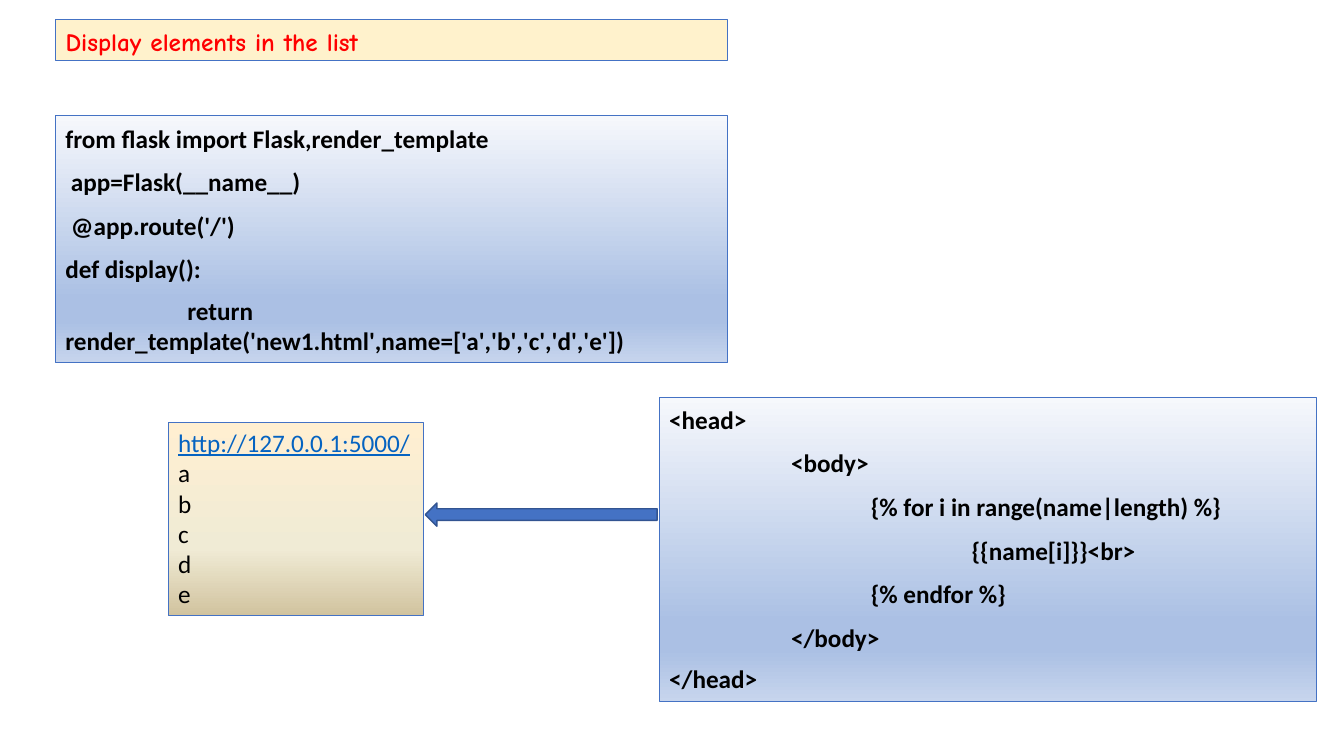
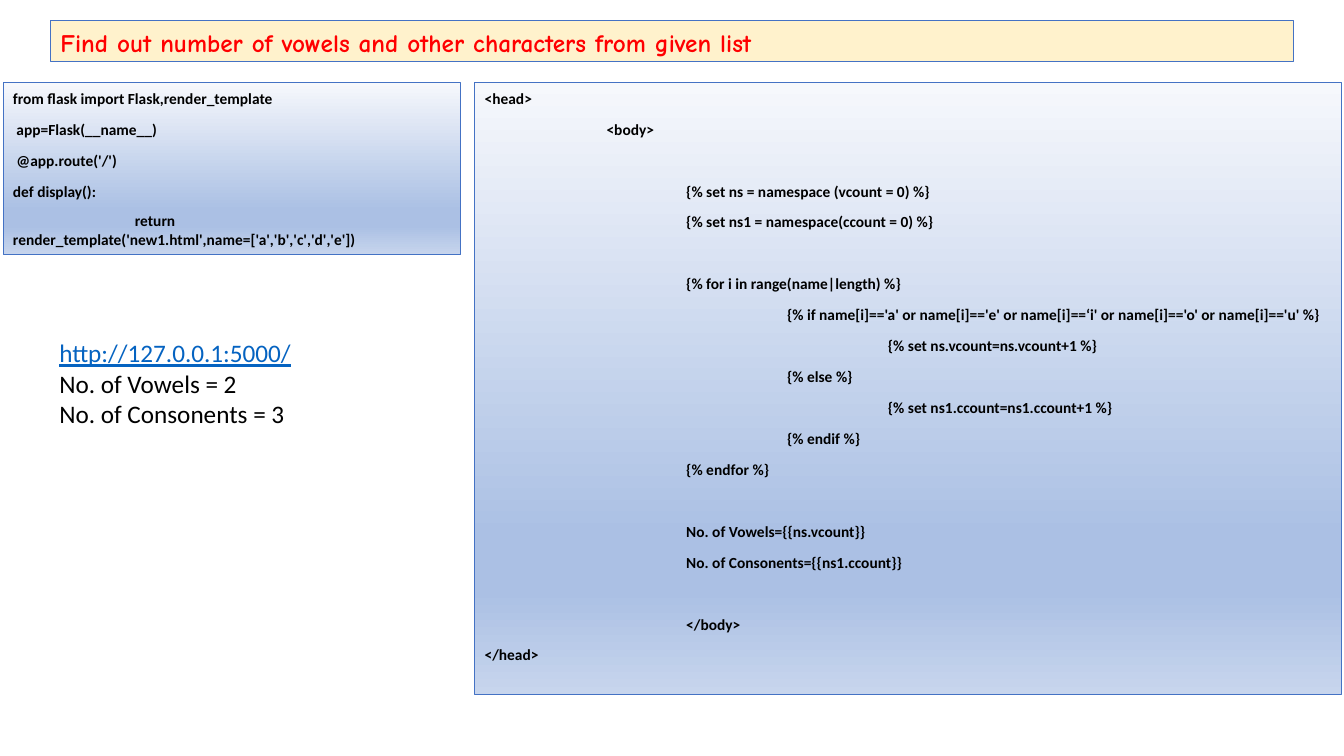
from lxml import etree
from pptx import Presentation
from pptx.dml.color import RGBColor
from pptx.enum import shapes, text
from pptx.oxml.ns import qn
from pptx.util import Pt

CREAM = RGBColor(0xFF, 0xF2, 0xCC)
RED = RGBColor(0xFF, 0x00, 0x00)
BLACK = RGBColor(0x00, 0x00, 0x00)
BLUE = RGBColor(0x44, 0x72, 0xC4)
DARK_BLUE = RGBColor(0x32, 0x54, 0x91)
LINK_BLUE = RGBColor(0x05, 0x63, 0xC1)
BLUE_FADE = [
    (0, RGBColor(0xF6, 0xF8, 0xFC)),
    (74, RGBColor(0xAB, 0xC0, 0xE4)),
    (83, RGBColor(0xAB, 0xC0, 0xE4)),
    (100, RGBColor(0xC7, 0xD5, 0xED)),
]
SAND_FADE = [
    (0, RGBColor(0xFF, 0xEF, 0xD1)),
    (65, RGBColor(0xF0, 0xEB, 0xD5)),
    (100, RGBColor(0xD1, 0xC3, 0x9F)),
]

TITLE_FONT, BODY_FONT = "Comic Neue", "Calibri"
INDENTS = [0, 87.1, 144, 216, 288]
LINE_SPACING, SPACE_AFTER = 1.07, 8
BLOCK_GAP = 22.1

URL = "http://127.0.0.1:5000/"
FLASK_CODE = [[
    (0, "from flask import Flask,render_template"),
    (0, " app=Flask(__name__)"),
    (0, " @app.route('/')"),
    (0, "def display():"),
    (1, "return render_template('new1.html',name=['a','b','c','d','e'])"),
]]
LIST_TEMPLATE = [[
    (0, "<head>"),
    (1, "<body>"),
    (2, "{% for i in range(name|length) %}"),
    (3, "{{name[i]}}<br>"),
    (2, "{% endfor %}"),
    (1, "</body>"),
    (0, "</head>"),
]]
VOWEL_TEMPLATE = [
    [(0, "<head>"), (1, "<body>")],
    [
        (2, "{% set ns = namespace (vcount = 0) %}"),
        (2, "{% set ns1 = namespace(ccount = 0) %}"),
    ],
    [
        (2, "{% for i in range(name|length) %}"),
        (3, "{% if name[i]=='a' or name[i]=='e' or name[i]==‘i' "
            "or name[i]=='o' or name[i]=='u' %}"),
        (4, "{% set ns.vcount=ns.vcount+1 %}"),
        (3, "{% else %}"),
        (4, "{% set ns1.ccount=ns1.ccount+1 %}"),
        (3, "{% endif %}"),
        (2, "{% endfor %}"),
    ],
    [
        (2, "No. of Vowels={{ns.vcount}}"),
        (2, "No. of Consonents={{ns1.ccount}}"),
    ],
    [(2, "</body>"), (0, "</head>")],
]

SLIDES = [
    {
        "title": ("Display elements in the list", (39.6, 13.7, 480.2, 29.5)),
        "size": 18,
        "code": [
            (FLASK_CODE, (39.6, 82.8, 480.2, 176.4)),
            (LIST_TEMPLATE, (470.9, 283.7, 469.4, 217.4)),
        ],
        "output": (["a", "b", "c", "d", "e"], (120.2, 301.7, 182.2, 138.2), SAND_FADE),
        "arrow": (303.8, 359.3, 165.6, 16.6),
    },
    {
        "title": ("Find out number of vowels and other characters from given list",
                  (36, 14.4, 888, 29.5)),
        "size": 11,
        "code": [
            (FLASK_CODE, (2.2, 59, 326.9, 123.1)),
            (VOWEL_TEMPLATE, (339.1, 59, 619.2, 437)),
        ],
        "output": (["No. of Vowels = 2", "No. of Consonents = 3"],
                   (35.3, 237.6, 182.2, 72.7), None),
        "arrow": None,
    },
]


def set_font(para, name, size, color, bold=False):
    font = para.font
    font.name, font.size, font.bold = name, Pt(size), bold
    font.color.rgb = color
    para.alignment = text.PP_ALIGN.LEFT


def set_frame(shape, wrap=True):
    frame = shape.text_frame
    frame.word_wrap = wrap
    frame.auto_size = text.MSO_AUTO_SIZE.NONE
    frame.vertical_anchor = text.MSO_ANCHOR.TOP
    return frame


def set_line(shape, color=BLUE, width=0.75):
    shape.line.color.rgb = color
    shape.line.width = Pt(width)


def fade(shape, stops):
    shape.fill.gradient()
    shape.fill.gradient_angle = 270
    stop_list = shape.element.spPr.find(qn("a:gradFill")).find(qn("a:gsLst"))
    for stop in list(stop_list):
        stop_list.remove(stop)
    for percent, color in stops:
        stop = etree.SubElement(stop_list, qn("a:gs"), pos=str(percent * 1000))
        etree.SubElement(stop, qn("a:srgbClr"), val=str(color))


def add_panel(page, box, stops):
    place = [Pt(v) for v in box]
    if not stops:
        return page.shapes.add_textbox(*place)
    panel = page.shapes.add_shape(shapes.MSO_SHAPE.RECTANGLE, *place)
    panel.shadow.inherit = False
    fade(panel, stops)
    set_line(panel)
    return panel


def add_paragraphs(frame, lines):
    for index, line in enumerate(lines):
        para = frame.add_paragraph() if index else frame.paragraphs[0]
        para.text = line
        yield para


def add_title(page, wording, box):
    title = page.shapes.title
    title.left, title.top, title.width, title.height = [Pt(v) for v in box]
    title.fill.solid()
    title.fill.fore_color.rgb = CREAM
    set_line(title)
    frame = set_frame(title)
    frame.text = wording
    para = frame.paragraphs[0]
    para.line_spacing = LINE_SPACING
    set_font(para, TITLE_FONT, 18, RED, bold=True)


def add_code(page, blocks, box, size):
    frame = set_frame(add_panel(page, box, BLUE_FADE))
    lines = [(level, line, BLOCK_GAP if b and not i else 0)
             for b, block in enumerate(blocks)
             for i, (level, line) in enumerate(block)]
    paras = list(add_paragraphs(frame, [line for _, line, _ in lines]))
    for para, (level, _, gap) in zip(paras, lines):
        set_font(para, BODY_FONT, size, BLACK, bold=True)
        para.space_before = Pt(gap)
        para._p.get_or_add_pPr().set("indent", str(Pt(INDENTS[level])))
    for para in paras[:-1]:
        para.line_spacing = LINE_SPACING
        para.space_after = Pt(SPACE_AFTER)


def add_output(page, results, box, stops):
    frame = set_frame(add_panel(page, box, stops), wrap=False)
    for para in add_paragraphs(frame, [URL] + results):
        set_font(para, BODY_FONT, 18, BLACK)
    address = frame.paragraphs[0]
    address.font.color.rgb = LINK_BLUE
    address.font.underline = True


def add_arrow(page, box):
    arrow = page.shapes.add_shape(shapes.MSO_SHAPE.LEFT_ARROW, *[Pt(v) for v in box])
    arrow.shadow.inherit = False
    arrow.fill.solid()
    arrow.fill.fore_color.rgb = BLUE
    set_line(arrow, DARK_BLUE, 1)


def main():
    deck = Presentation()
    deck.slide_width, deck.slide_height = Pt(960), Pt(540)
    for content in SLIDES:
        page = deck.slides.add_slide(deck.slide_layouts[5])
        add_title(page, *content["title"])
        for blocks, box in content["code"]:
            add_code(page, blocks, box, content["size"])
        add_output(page, *content["output"])
        if content["arrow"]:
            add_arrow(page, content["arrow"])
    deck.save("out.pptx")


if __name__ == "__main__":
    main()
